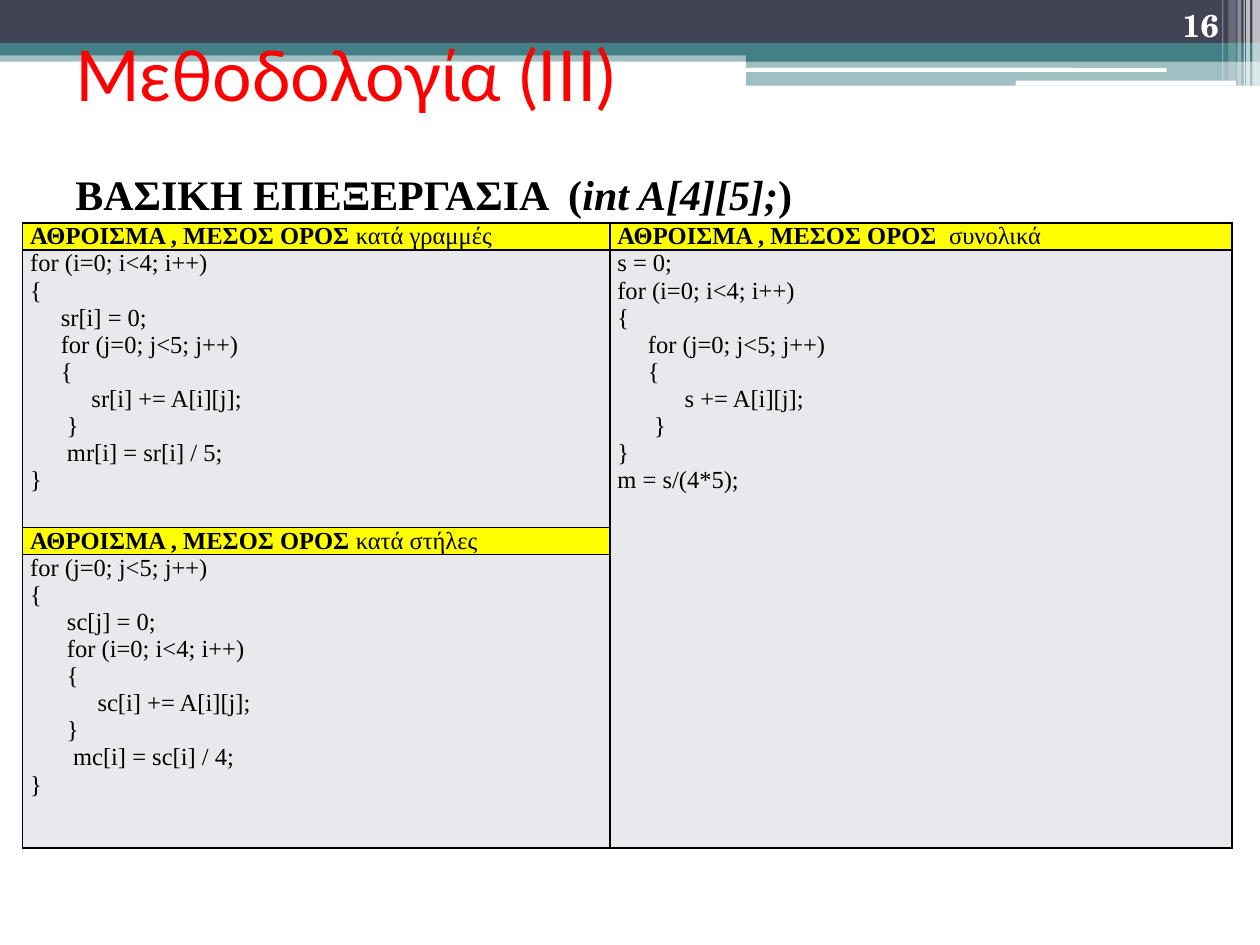
import pptx
import pptx.dml.color
import pptx.enum.shapes
import pptx.enum.text
import pptx.oxml
import pptx.oxml.ns
import pptx.util
from pptx.util import Inches, Pt

COLORS = {
    "navy": "424456", "teal": "438086", "white": "FFFFFF", "black": "000000",
    "red": "FF0000", "yellow": "FFFF00", "code": "E9E9ED",
}
SERIF = "Times New Roman"
SPACE_WIDTH = Pt(3.5)  # one space of 14 pt Times New Roman

# left, top, width, height, color, opacity in percent
BANDS = [
    (0, 0.4, 10, 0.09, "teal", 50),
    (0, 0, 10, 0.34, "navy", 100),
    (0, 0.34, 10, 0.1, "teal", 100),
    (5.92, 0.39, 4.08, 0.1, "teal", 100),
    (5.92, 0.48, 4.08, 0.2, "teal", 50),
]
HIGHLIGHTS = [(5.91, 0.54, 3.35, 0.03, "white", 100), (8.06, 0.64, 1.75, 0.04, "white", 100)]
STRIPES = [
    (left, 0, width, height, "white", opacity)
    for left, width, height, opacity in [
        (9.94, 0.06, 0.68, 65), (9.89, 0.03, 0.68, 65), (9.87, 0.01, 0.68, 60),
        (9.82, 0.03, 0.68, 40), (9.75, 0.06, 0.64, 20), (9.7, 0.01, 0.64, 30),
    ]
]

HEADING = "ΑΘΡΟΙΣΜΑ , ΜΕΣΟΣ ΟΡΟΣ "
ROW_SUMS = """for (i=0; i<4; i++)
{
     sr[i] = 0;
     for (j=0; j<5; j++)
     {
          sr[i] += A[i][j];
      }
      mr[i] = sr[i] / 5;
}"""
COLUMN_SUMS = """for (j=0; j<5; j++)
{
      sc[j] = 0;
      for (i=0; i<4; i++)
      {
           sc[i] += A[i][j];
      }
       mc[i] = sc[i] / 4;
}"""
TOTAL_SUM = """s = 0;
for (i=0; i<4; i++)
{
     for (j=0; j<5; j++)
     {
           s += A[i][j];
      }
}
m = s/(4*5);"""


def rgb(name):
    return pptx.dml.color.RGBColor.from_string(COLORS[name])


def set_all(target, values):
    for name, value in values.items():
        setattr(target, name, value)


def add_run(paragraph, text, color="black", **font_values):
    run = paragraph.add_run()
    run.text = text
    set_all(run.font, font_values)
    run.font.color.rgb = rgb(color)


def add_bars(slide, bars, kind):
    for left, top, width, height, color, opacity in bars:
        bar = slide.shapes.add_shape(
            kind, Inches(left), Inches(top), Inches(width), Inches(height))
        bar.shadow.inherit = False
        bar.line.fill.background()
        bar.fill.solid()
        bar.fill.fore_color.rgb = rgb(color)
        if opacity < 100:
            srgb = bar.fill._xPr.find(".//" + pptx.oxml.ns.qn("a:srgbClr"))
            srgb.append(pptx.oxml.parse_xml(
                f'<a:alpha {pptx.oxml.ns.nsdecls("a")} val="{opacity * 1000}"/>'))


def add_banner(slide):
    shapes = pptx.enum.shapes.MSO_SHAPE
    add_bars(slide, BANDS, shapes.RECTANGLE)
    add_bars(slide, HIGHLIGHTS, shapes.ROUNDED_RECTANGLE)
    add_bars(slide, STRIPES, shapes.RECTANGLE)


def place_title(slide, left, top, width, height):
    """Put the title in its box, in front of the banner."""
    title = slide.shapes.title
    slide.shapes._spTree.append(title._element)
    set_all(title, {"left": left, "top": top, "width": width, "height": height})
    set_all(title.text_frame, {
        "vertical_anchor": pptx.enum.text.MSO_ANCHOR.MIDDLE,
        "auto_size": pptx.enum.text.MSO_AUTO_SIZE.NONE, "word_wrap": True})
    paragraph = title.text_frame.paragraphs[0]
    paragraph.alignment = pptx.enum.text.PP_ALIGN.LEFT
    add_run(paragraph, "Μεθοδολογία (ΙII)", "red", name="Lato", size=Pt(40))


def add_page_number(slide, left, top, width, height):
    frame = slide.shapes.add_textbox(left, top, width, height).text_frame
    set_all(frame, {"word_wrap": True, "vertical_anchor": pptx.enum.text.MSO_ANCHOR.BOTTOM})
    paragraph = frame.paragraphs[0]
    paragraph.alignment = pptx.enum.text.PP_ALIGN.RIGHT
    add_run(paragraph, "16", "white", name="TeX Gyre Schola", size=Pt(18), bold=True)


def add_subtitle(slide, left, top, width, height):
    frame = slide.shapes.add_textbox(left, top, width, height).text_frame
    set_all(frame, {
        "word_wrap": False, "vertical_anchor": pptx.enum.text.MSO_ANCHOR.MIDDLE,
        "auto_size": pptx.enum.text.MSO_AUTO_SIZE.SHAPE_TO_FIT_TEXT,
        "margin_top": Inches(0.17), "margin_bottom": Inches(0.04)})
    for text, italic in [("ΒΑΣΙΚΗ ΕΠΕΞΕΡΓΑΣΙΑ  (", False), ("int A[4][5];", True), (")", False)]:
        add_run(frame.paragraphs[0], text, name=SERIF, size=Pt(24), bold=True, italic=italic)


def format_cell(cell, color):
    set_all(cell, {"margin_left": Inches(0.06), "margin_right": Inches(0.06),
                   "margin_top": 0, "margin_bottom": 0})
    cell.fill.solid()
    cell.fill.fore_color.rgb = rgb(color)
    properties = cell._tc.get_or_add_tcPr()
    for index, side in enumerate(["lnL", "lnR", "lnT", "lnB"]):
        properties.insert(index, pptx.oxml.parse_xml(
            f'<a:{side} {pptx.oxml.ns.nsdecls("a")} w="{Pt(1)}"><a:solidFill>'
            f'<a:srgbClr val="{COLORS["black"]}"/></a:solidFill></a:{side}>'))


def fill_heading(cell, start, scope):
    paragraph = cell.text_frame.paragraphs[0]
    add_run(paragraph, start, name=SERIF, size=Pt(14), bold=True)
    add_run(paragraph, scope, name=SERIF, size=Pt(14), bold=False)


def fill_code(cell, code):
    """Write one paragraph per line, turning leading spaces into an indent."""
    frame = cell.text_frame
    for number, line in enumerate(code.splitlines()):
        paragraph = frame.add_paragraph() if number else frame.paragraphs[0]
        statement = line.lstrip()
        indent = (len(line) - len(statement)) * SPACE_WIDTH
        paragraph._p.get_or_add_pPr().set("marL", str(indent))
        add_run(paragraph, statement, name=SERIF, size=Pt(14), bold=False)


def add_code_table(slide, left, top, width, height):
    table = slide.shapes.add_table(4, 2, left, top, width, height).table
    set_all(table, {"first_row": False, "horz_banding": False})
    table.columns[0].width = Inches(4.66)
    table.columns[1].width = width - Inches(4.66)
    heading_height = Inches(0.21)
    first_code_height = Inches(2.2)
    row_heights = [heading_height, first_code_height, heading_height,
                   height - 2 * heading_height - first_code_height]
    for row, row_height in zip(table.rows, row_heights):
        row.height = row_height
    for row in range(4):
        for column in range(2):
            is_heading = row == 0 or (row == 2 and column == 0)
            format_cell(table.cell(row, column), "yellow" if is_heading else "code")
    table.cell(1, 1).merge(table.cell(3, 1))
    fill_heading(table.cell(0, 0), HEADING, "κατά γραμμές")
    fill_heading(table.cell(0, 1), HEADING + " ", "συνολικά")
    fill_heading(table.cell(2, 0), HEADING, "κατά στήλες")
    fill_code(table.cell(1, 0), ROW_SUMS)
    fill_code(table.cell(1, 1), TOTAL_SUM)
    fill_code(table.cell(3, 0), COLUMN_SUMS)


def main():
    deck = pptx.Presentation()
    set_all(deck, {"slide_width": Inches(10), "slide_height": Inches(7.5)})
    slide = deck.slides.add_slide(deck.slide_layouts[5])
    add_banner(slide)
    add_code_table(slide, Inches(0.18), Inches(1.77), Inches(9.6), Inches(4.95))
    place_title(slide, Inches(0.5), Inches(0), Inches(9), Inches(1.17))
    add_page_number(slide, Inches(8.94), Inches(0), Inches(0.83), Inches(0.4))
    add_subtitle(slide, Inches(0.5), Inches(1.17), Inches(6.04), Inches(0.61))
    deck.save("out.pptx")


if __name__ == "__main__":
    main()
